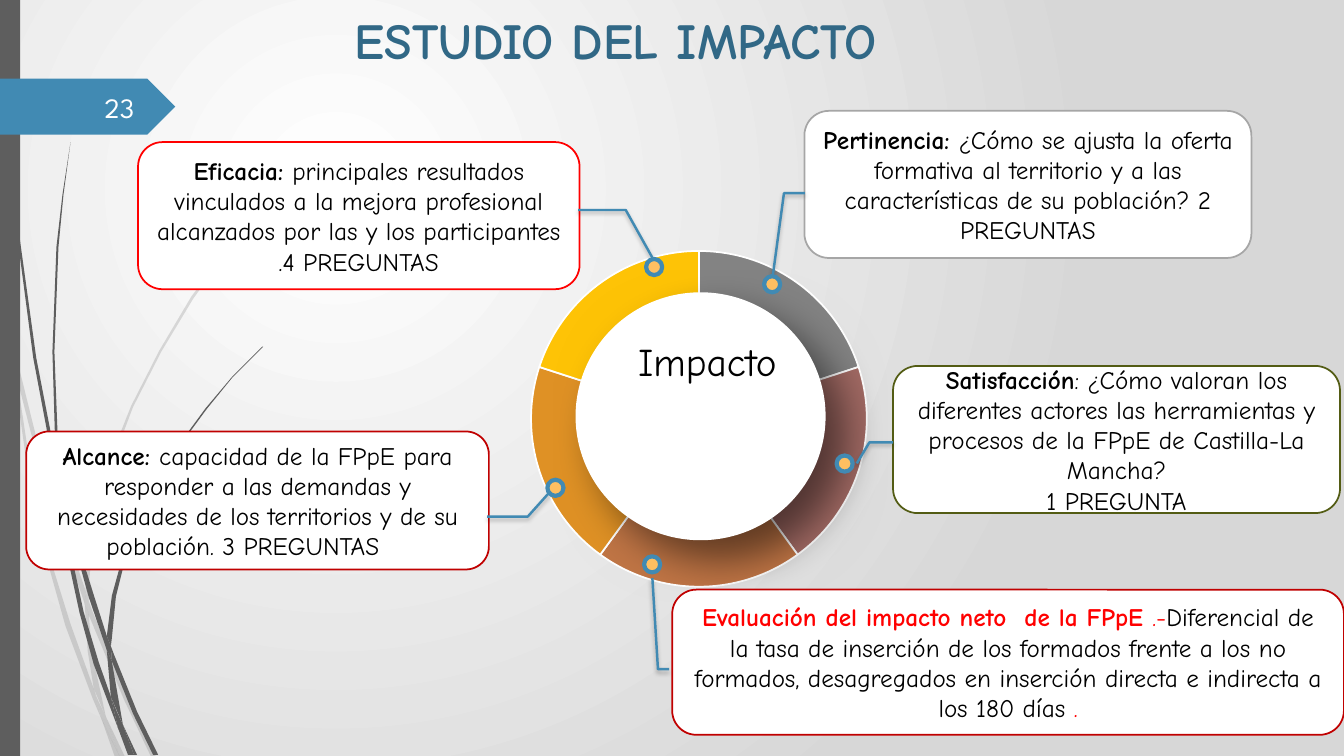
from lxml.etree import SubElement
from pptx import Presentation
from pptx.dml.color import RGBColor
from pptx.enum.shapes import MSO_SHAPE
from pptx.enum.text import MSO_ANCHOR, PP_ALIGN
from pptx.oxml.ns import qn
from pptx.util import Pt

HEX = {
    "white": "FFFFFF", "mist": "D7D7D7", "stem": "5E5E5E", "blue": "418AB3",
    "title": "316886", "number": "FEFFFF", "black": "000000", "red": "FF0000",
    "wine": "C00000", "silver": "A6A6A6", "olive": "535C14", "dot": "FFBF61",
    "gray": "838383", "brown": "A26A64", "rust": "C07545", "orange": "DF9125",
    "yellow": "FEC306",
}
HAND = "Comic Neue"


def paint(shape, fill=None, line=None, width=1.25, shade=None):
    """Set fill, line and shadow; shade is alpha, blur, distance, angle."""
    shape.shadow.inherit = False
    for part, tone in ((shape.fill, fill), (shape.line.fill, line)):
        if tone:
            part.solid()
            part.fore_color.rgb = RGBColor.from_string(HEX[tone])
        else:
            part.background()
    if line:
        shape.line.width = Pt(width)
    if shade:
        alpha, blur, dist, angle = shade
        glow = SubElement(shape._element.spPr.find(qn("a:effectLst")), qn("a:outerShdw"),
                          blurRad=str(Pt(blur)), dist=str(Pt(dist)),
                          dir=str(angle * 60000), algn="ctr", rotWithShape="0")
        tone = SubElement(glow, qn("a:srgbClr"), val=HEX["black"])
        SubElement(tone, qn("a:alpha"), val=str(alpha * 1000))


def write(shape, paras, align, anchor, size=18, face=HAND):
    """Fill a shape with paragraphs, each a list of (text, colour, bold)."""
    frame = shape.text_frame
    frame.word_wrap = True
    frame.vertical_anchor = anchor
    for n, runs in enumerate(paras):
        para = frame.add_paragraph() if n else frame.paragraphs[0]
        para.alignment = align
        for text, tone, bold in runs:
            run = para.add_run()
            run.text = text
            look = {"name": face, "size": Pt(size), "bold": bold}
            for key, value in look.items():
                setattr(run.font, key, value)
            run.font.color.rgb = RGBColor.from_string(HEX[tone])


deck = Presentation()
deck.slide_width, deck.slide_height = Pt(960), Pt(540)
slide = deck.slides.add_slide(deck.slide_layouts[6])
shapes = slide.shapes

# Background: white glow fading to gray
back = slide.background.fill
back.gradient()
for stop, tone, place in zip(back.gradient_stops, ("white", "mist"), (0, 1)):
    stop.color.rgb = RGBColor.from_string(HEX[tone])
    stop.position = place
grad = slide._element.find(".//" + qn("a:gradFill"))
grad.remove(grad.find(qn("a:lin")))
ring = SubElement(grad, qn("a:path"))
ring.set("path", "circle")
SubElement(ring, qn("a:fillToRect"), l="50000", t="50000", r="100000", b="100000")

# Grass stems, in units of 0.72 pt
PALE = [
    [(11, 350), (9, 322), (0, 282), (0, 299), (10, 344)],
    [(58, 522), (84, 599), (85, 586), (62, 520), (36, 434), (14, 345), (17, 376), (36, 450)],
    [(92, 607), (88, 596), (88, 610), (123, 694), (150, 751), (155, 751), (127, 692)],
    [(119, 751), (124, 751), (105, 711)],
    [(93, 683), (70, 619), (47, 545), (31, 469), (17, 376), (11, 350), (28, 470),
     (44, 546), (65, 621), (92, 693), (101, 714), (99, 707)],
    [(84, 599), (87, 646), (93, 683), (105, 711), (91, 646), (88, 608)],
    [(88, 584), (93, 522), (110, 462), (132, 404), (160, 349), (192, 296), (229, 245),
     (268, 198), (312, 154), (312, 153), (268, 197), (228, 244), (190, 294), (158, 348),
     (130, 403), (107, 461), (90, 522), (85, 584), (88, 596)],
    [(101, 714), (114, 751), (119, 751)],
    [(88, 608), (88, 596), (85, 586), (84, 599)],
    [(96, 692), (93, 683), (101, 714), (119, 751), (105, 711)],
]
DARK = [
    [(7, 110), (17, 233), (33, 355), (56, 477), (57, 481), (55, 453), (36, 355),
     (19, 232), (8, 109), (5, 48), (4, 0), (3, 0), (4, 48)],
    [(88, 592), (106, 645), (106, 631), (93, 590), (75, 532), (60, 472), (64, 505)],
    [(113, 649), (110, 641), (111, 656), (132, 708), (152, 749), (157, 749), (136, 706)],
    [(110, 691), (98, 657), (83, 607), (72, 556), (64, 505), (57, 477), (68, 557),
     (79, 608), (93, 659), (117, 722)],
    [(60, 472), (58, 453), (54, 349), (58, 245), (63, 193), (70, 141), (62, 193),
     (56, 245), (52, 349), (55, 449)],
    [(133, 749), (136, 749), (122, 719)],
    [(111, 633), (115, 592), (125, 552), (140, 513), (158, 476), (180, 440), (205, 406),
     (231, 374), (261, 344), (260, 344), (231, 373), (204, 405), (179, 439), (156, 474),
     (137, 511), (122, 551), (111, 591), (106, 631), (110, 641)],
    [(117, 722), (127, 749), (131, 749)],
    [(106, 645), (110, 691), (122, 719), (111, 656)],
    [(106, 645), (111, 656), (110, 641), (106, 631)],
    [(116, 706), (110, 691), (117, 722), (130, 749), (133, 749), (122, 719)],
]
for stems, alpha in ((PALE, 20), (DARK, 100)):
    for points in stems:
        path = shapes.build_freeform(*points[0], scale=Pt(0.72))
        path.add_line_segments(points[1:], close=True)
        stem = path.convert_to_shape()
        paint(stem, "stem")
        if alpha < 100:
            tone = stem._element.spPr.find(".//" + qn("a:srgbClr"))
            SubElement(tone, qn("a:alpha"), val=str(alpha * 1000))

bar = shapes.add_shape(MSO_SHAPE.RECTANGLE, 0, 0, Pt(14.4), Pt(540))
paint(bar, "stem")
tag = shapes.add_shape(MSO_SHAPE.PENTAGON, 0, Pt(56.2), Pt(125.2), Pt(40))
paint(tag, "blue")

title = shapes.add_textbox(Pt(88.6), Pt(2.9), Pt(702), Pt(100.8))
write(title, [[("ESTUDIO DEL IMPACTO", "title", True)]], PP_ALIGN.CENTER, MSO_ANCHOR.TOP, 36)
number = shapes.add_textbox(Pt(41.8), Pt(62), Pt(61.2), Pt(28.8))
write(number, [[("23", "number", False)]], PP_ALIGN.RIGHT, MSO_ANCHOR.MIDDLE, 20,
      "League Spartan")

# Ring of five equal slices, clockwise from the top
for n, tone in enumerate(("gray", "brown", "rust", "orange", "yellow")):
    slice_ = shapes.add_shape(MSO_SHAPE.PIE, Pt(379.4), Pt(179.3), Pt(239.8), Pt(239.8))
    for side in (0, 1):
        slice_.adjustments[side] = (270 + 72 * (n + side)) % 360 * 0.6
    paint(slice_, tone, "white")

core = shapes.add_shape(MSO_SHAPE.OVAL, Pt(411.1), Pt(208.8), Pt(178.6), Pt(177.1))
paint(core, "white", shade=(50, 30, 20, 45))
write(core, [[("Impacto", "black", False)]], PP_ALIGN.LEFT, MSO_ANCHOR.TOP, 28)
core.text_frame.margin_left = Pt(18.6)
core.text_frame.margin_top = Pt(6)

# Question boxes: left, top, width, height, border, paragraphs
BOXES = [
    (98.6, 101.5, 315.4, 105.1, "red", [[
        ("Eficacia: ", "black", True),
        ("principales resultados vinculados a la mejora profesional alcanzados "
         "por las y los participantes .4 PREGUNTAS", "black", False)]]),
    (18.7, 308.2, 330.5, 98.6, "wine", [[
        ("Alcance: ", "black", True),
        ("capacidad de la FPpE para responder a las demandas y necesidades de los "
         "territorios y de su población. 3 PREGUNTAS\t", "black", False)]]),
    (574.6, 79.2, 319.3, 105.1, "silver", [[
        ("Pertinencia: ", "black", True),
        ("¿Cómo se ajusta la oferta formativa al territorio y a las características "
         "de su población? 2 PREGUNTAS", "black", False)]]),
    (637.9, 261.4, 319.3, 105.1, "olive", [[
        ("Satisfacción", "black", True),
        (": ¿Cómo valoran los diferentes actores las herramientas y procesos "
         "de la FPpE de Castilla-La Mancha?", "black", False)],
        [("1 PREGUNTA", "black", False)]]),
    (480.2, 421.2, 479.8, 103.7, "wine", [[
        ("Evaluación del impacto neto  de la FPpE ", "red", True),
        (".-", "red", False),
        ("Diferencial de la tasa de inserción de los formados frente a los no formados, "
         "desagregados en inserción directa e indirecta a los 180 días ", "black", False),
        (".", "red", False)]]),
]
for left, top, wide, high, edge, paras in BOXES:
    box = shapes.add_shape(MSO_SHAPE.ROUNDED_RECTANGLE, Pt(left), Pt(top), Pt(wide), Pt(high))
    paint(box, "white", edge)
    write(box, paras, PP_ALIGN.CENTER, MSO_ANCHOR.MIDDLE)

# Leaders from ring to box, then the dots at their ends
LEADS = [
    [(393.8, 349.9), (377.3, 368.6), (347.8, 368.6)],
    [(465.8, 412.6), (470.2, 478.1), (478.1, 478.1)],
    [(465.8, 184.3), (447.1, 149.8), (413.3, 149.8)],
    [(552.2, 196.6), (560.2, 137.5), (574.6, 137.5)],
    [(612, 331.2), (621.4, 316.1), (637.9, 316.1)],
]
for points in LEADS:
    path = shapes.build_freeform(*points[0], scale=Pt(1))
    path.add_line_segments(points[1:], close=False)
    paint(path.convert_to_shape(), None, "blue", 1.75, (25, 3, 2, 90))

DOTS = [(545.8, 197.3), (461.5, 185), (391, 342.7), (597.6, 325.4), (460.1, 397.4)]
for left, top in DOTS:
    dot = shapes.add_shape(MSO_SHAPE.OVAL, Pt(left), Pt(top), Pt(11.5), Pt(11.5))
    paint(dot, "dot", "blue", 3)

deck.save("out.pptx")
